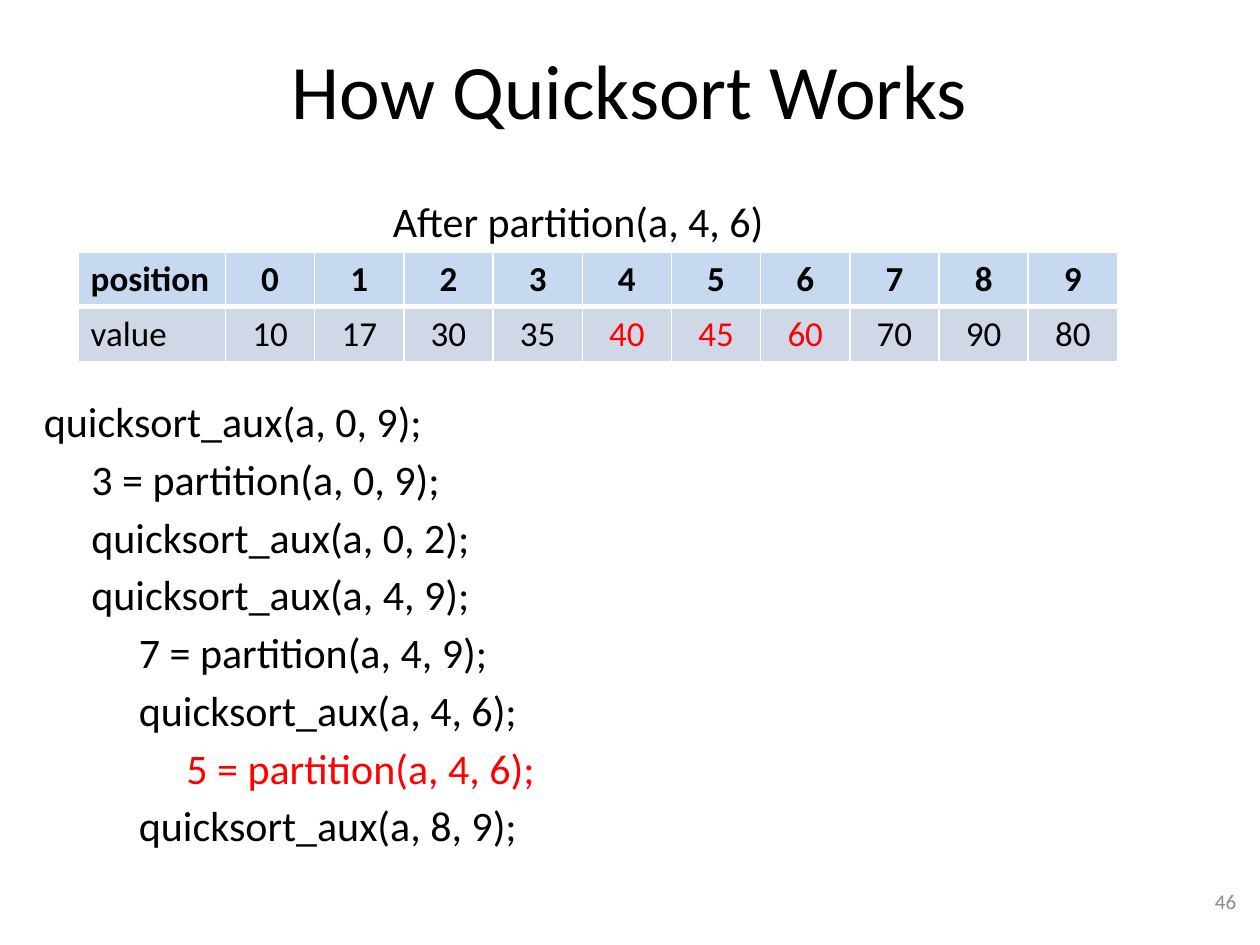
from lxml import etree
from pptx import Presentation
from pptx.dml.color import RGBColor
from pptx.enum import text
from pptx.oxml import ns
from pptx.util import Inches, Pt

COLORS = {"black": "000000", "red": "FF0000", "gray": "8C8C8C",
          "header": "C6D9F1", "value": "D0D8E8", "border": "FFFFFF"}
LEFT, CENTER, RIGHT = text.PP_ALIGN.LEFT, text.PP_ALIGN.CENTER, text.PP_ALIGN.RIGHT
TOP, MIDDLE = text.MSO_ANCHOR.TOP, text.MSO_ANCHOR.MIDDLE


def style(p, size, color="black", align=LEFT, bold=False):
    p.alignment = align
    for r in p.runs:
        r.font.name = "Calibri"
        r.font.size = Pt(size)
        r.font.bold = bold
        r.font.color.rgb = RGBColor.from_string(COLORS[color])


def add_text(box, words, anchor=TOP, wrap=True):
    tf = s.shapes.add_textbox(*map(Inches, box)).text_frame
    tf.word_wrap = wrap
    tf.vertical_anchor = anchor
    tf.text = words
    return tf


prs = Presentation()
prs.slide_width, prs.slide_height = Inches(10), Inches(7.5)
s = prs.slides.add_slide(prs.slide_layouts[6])

# Title
tf = add_text((0.5, 0.08, 9, 1.25), "How Quicksort Works", MIDDLE)
style(tf.paragraphs[0], 44, align=CENTER)

# Call trace: nesting level and call
trace = [
    (0, "quicksort_aux(a, 0, 9);"),
    (1, "3 = partition(a, 0, 9);"),
    (1, "quicksort_aux(a, 0, 2);"),
    (1, "quicksort_aux(a, 4, 9);"),
    (2, "7 = partition(a, 4, 9);"),
    (2, "quicksort_aux(a, 4, 6);"),
    (3, "5 = partition(a, 4, 6);"),
    (2, "quicksort_aux(a, 8, 9);"),
]
current = 6
tf = add_text((0.25, 3.09, 9, 3.91), "\n".join(call for _, call in trace))
for i, (p, (level, _)) in enumerate(zip(tf.paragraphs, trace)):
    style(p, 24, "red" if i == current else "black")
    p.space_before = Pt(4.2)
    p._p.get_or_add_pPr().set("marL", str(Inches(0.377 * level)))

# Slide number
tf = add_text((7.58, 6.95, 2.33, 0.4), "46", MIDDLE)
style(tf.paragraphs[0], 12, "gray", RIGHT)

# Array table
values = [10, 17, 30, 35, 40, 45, 60, 70, 90, 80]
partitioned = range(4, 7)
rows = [["position", *range(len(values))], ["value", *values]]
label_w, cell_w, row_h = 1.17, 0.708, 0.435
table = s.shapes.add_table(
    2, len(rows[0]), Inches(0.62), Inches(2),
    Inches(label_w + cell_w * len(values)), Inches(2 * row_h)).table
for c, column in enumerate(table.columns):
    column.width = Inches(cell_w if c else label_w)
for r, row in enumerate(rows):
    for c, entry in enumerate(row):
        cell = table.cell(r, c)
        cell.text = str(entry)
        red = r == 1 and c - 1 in partitioned
        style(cell.text_frame.paragraphs[0], 20, "red" if red else "black",
              CENTER if c else LEFT, bold=r == 0)
        # White borders, thicker between the two rows
        tcPr = cell._tc.get_or_add_tcPr()
        for side in "LRTB":
            width = 3 if side == "BT"[r] else 1
            ln = etree.SubElement(tcPr, ns.qn("a:ln" + side), w=str(Pt(width)))
            fill = etree.SubElement(ln, ns.qn("a:solidFill"))
            etree.SubElement(fill, ns.qn("a:srgbClr"), val=COLORS["border"])
        cell.fill.solid()
        cell.fill.fore_color.rgb = RGBColor.from_string(COLORS["value" if r else "header"])

# Table caption
tf = add_text((3.02, 1.5, 3.18, 0.5), "After partition(a, 4, 6)", wrap=False)
style(tf.paragraphs[0], 24)

prs.save("out.pptx")
